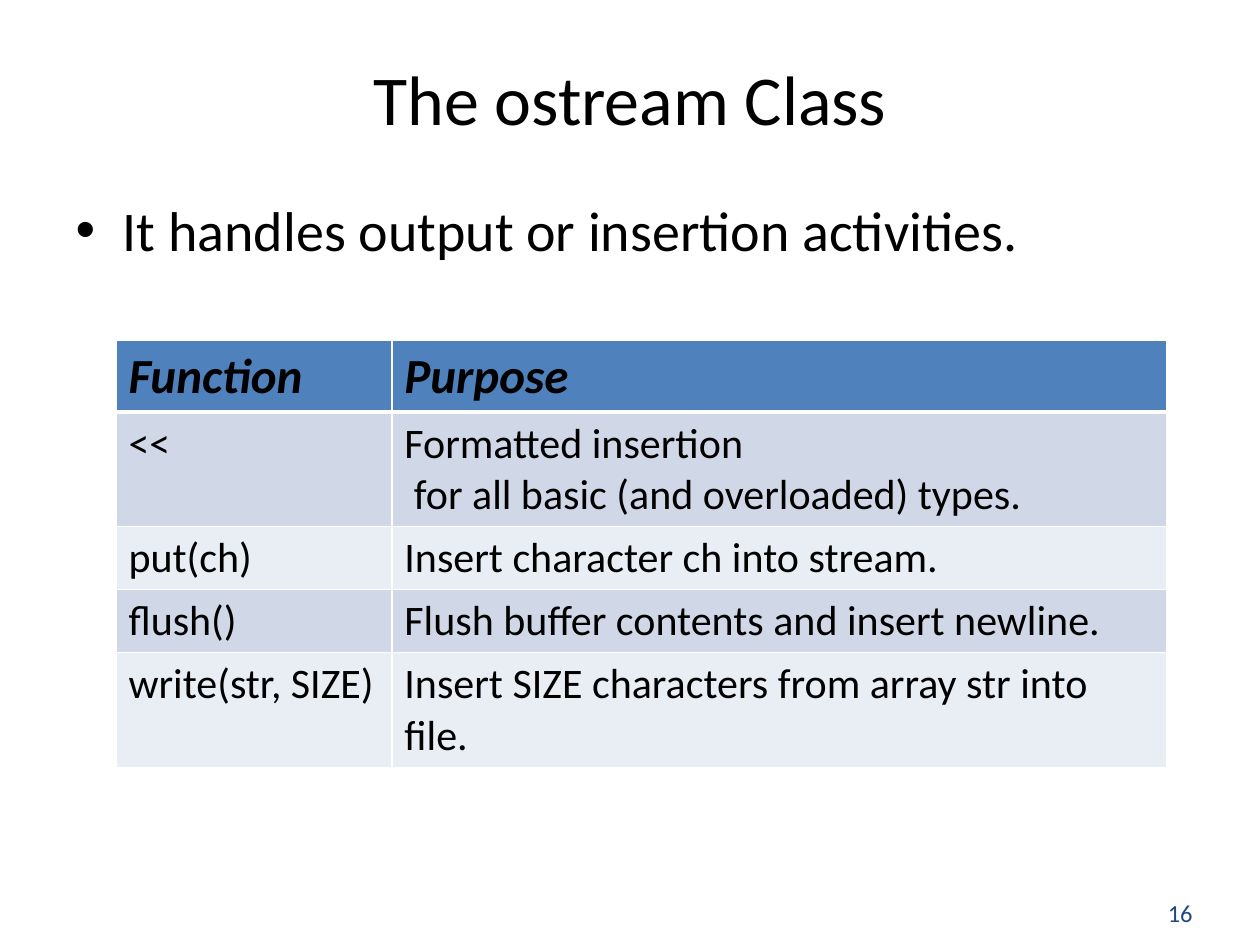
from lxml import etree
from pptx import Presentation
from pptx.dml.color import RGBColor
from pptx.enum.text import MSO_ANCHOR, MSO_AUTO_SIZE, PP_ALIGN
from pptx.oxml.ns import qn
from pptx.util import Inches, Pt

MIDDLE = MSO_ANCHOR.MIDDLE
TOP = MSO_ANCHOR.TOP
NO_FIT = MSO_AUTO_SIZE.NONE
LEFT, CENTER = PP_ALIGN.LEFT, PP_ALIGN.CENTER

COLORS = {
    "text": "000000",
    "number": "1F497D",
    "header": "4F81BD",
    "odd": "D0D8E8",
    "even": "E9EDF4",
    "border": "FFFFFF",
}

ROWS = [
    ("Function", "Purpose"),
    ("<<", "Formatted insertion\n for all basic (and overloaded) types."),
    ("put(ch)", "Insert character ch into stream."),
    ("flush()", "Flush buffer contents and insert newline."),
    ("write(str, SIZE)", "Insert SIZE characters from array str into file."),
]


class SlideBuilder:
    font = "Calibri"

    def __init__(self, s):
        self.s = s

    def add_text(self, tf, text, size, color="text", bold=None, align=LEFT):
        for i, line in enumerate(text.split("\n")):
            p = tf.paragraphs[0] if i == 0 else tf.add_paragraph()
            p.alignment = align
            r = p.add_run()
            r.text = line
            r.font.name = self.font
            r.font.size = Pt(size)
            r.font.bold = r.font.italic = bold
            r.font.color.rgb = RGBColor.from_string(COLORS[color])

    def placeholder(self, idx, text, box, size, align=LEFT, anchor=TOP):
        sp = self.s.placeholders[idx]
        sp.left, sp.top, sp.width, sp.height = map(Inches, box)
        tf = sp.text_frame
        tf.auto_size = NO_FIT
        tf.vertical_anchor = anchor
        self.add_text(tf, text, size, align=align)

    def text_box(self, text, box, size, color):
        tf = self.s.shapes.add_textbox(*map(Inches, box)).text_frame
        tf.word_wrap = True
        tf.vertical_anchor = MIDDLE
        self.add_text(tf, text, size, color)

    def border(self, cell, side, width):
        tcPr = cell._tc.get_or_add_tcPr()
        ln = etree.SubElement(tcPr, qn(f"a:ln{side}"), w=str(Pt(width)))
        fill = etree.SubElement(ln, qn("a:solidFill"))
        etree.SubElement(fill, qn("a:srgbClr"), val=COLORS["border"])

    def table(self, rows, box, widths, heights):
        frame = self.s.shapes.add_table(len(rows), len(widths), *map(Inches, box))
        table = frame.table
        for column, width in zip(table.columns, widths):
            column.width = Inches(width)
        for i, (row, texts, height) in enumerate(zip(table.rows, rows, heights)):
            row.height = Inches(height)
            header = i == 0
            fill = "header" if header else ("even", "odd")[i % 2]
            for cell, text in zip(row.cells, texts):
                self.add_text(cell.text_frame, text, 28 if header else 24, bold=header)
                for side in "LRTB":
                    thick = (header and side == "B") or (i == 1 and side == "T")
                    self.border(cell, side, 3 if thick else 1)
                cell.fill.solid()
                cell.fill.fore_color.rgb = RGBColor.from_string(COLORS[fill])


def main():
    prs = Presentation()
    prs.slide_width, prs.slide_height = Inches(10), Inches(7.5)
    slide = SlideBuilder(prs.slides.add_slide(prs.slide_layouts[1]))
    slide.text_box("16", (9.17, 7.08, 0.67, 0.33), 14, "number")
    slide.placeholder(0, "The ostream Class", (0.5, 0.38, 9, 0.78), 40, CENTER, MIDDLE)
    slide.placeholder(1, "It handles output or insertion activities.",
                      (0.5, 1.5, 9, 5.2), 32)
    slide.table(ROWS, (0.92, 2.7, 8.33, 3.37), (2.19, 6.15),
                (0.57, 0.91, 0.5, 0.5, 0.91))
    prs.save("out.pptx")


if __name__ == "__main__":
    main()
